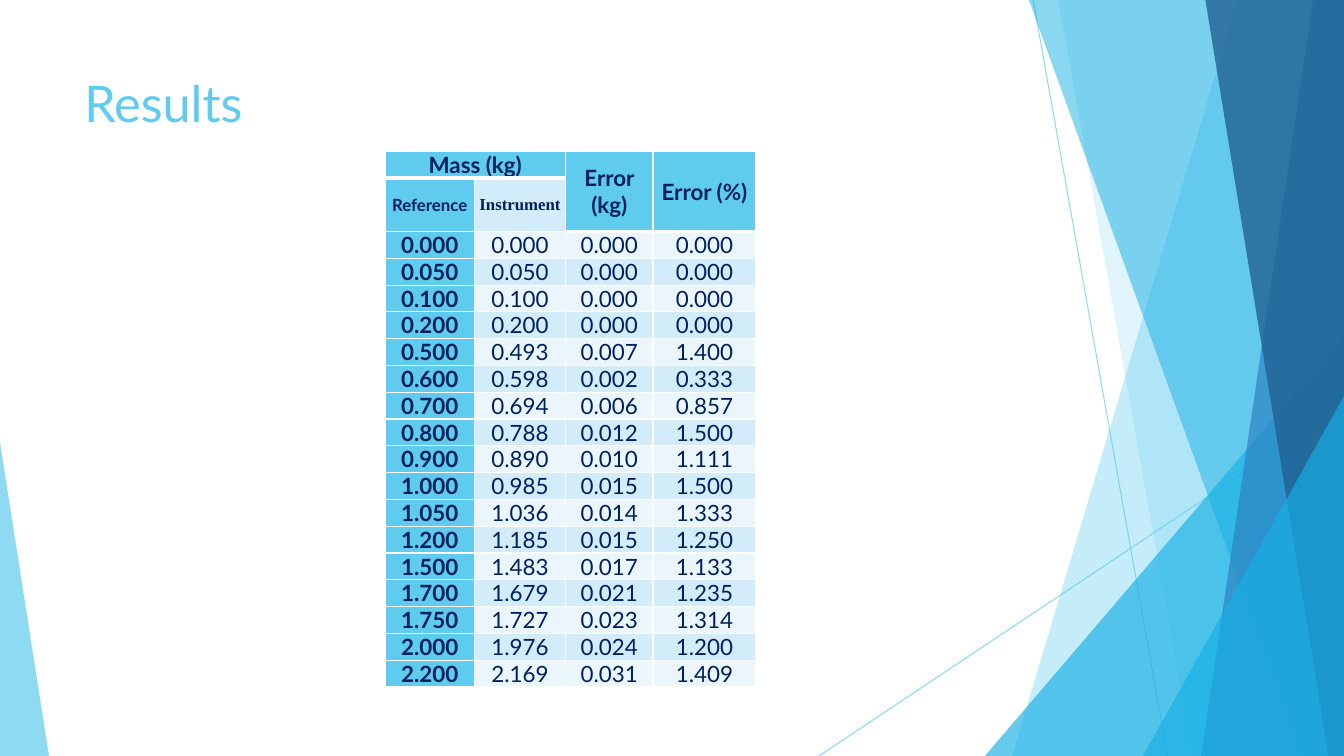
from lxml.etree import SubElement
from pptx import Presentation
from pptx.dml.color import RGBColor
from pptx.enum.shapes import MSO_CONNECTOR, MSO_SHAPE
from pptx.enum.text import MSO_ANCHOR, PP_ALIGN
from pptx.oxml.ns import qn
from pptx.util import Pt

SKY, AZURE, BLUE, NAVY = "5FCBEF", "17B0E4", "2E83C3", "226292"
INK, WHITE, PALE, PALER = "002060", "FFFFFF", "D2ECF9", "EAF6FC"

LINES = [((738, 0), (834, 540)), ((960, 290), (585, 540))]
FACETS = [
    ("band", (884, 723), SKY, 36),
    ("band", (756, 852), SKY, 20),
    ("triangle", (703.5, 240, 256.5, 300, 1), AZURE, 66),
    ("band", (735, 930), AZURE, 50),
    ("band", (938, 858), BLUE, 70),
    ("band", (861, 949), NAVY, 80),
    ("triangle", (816.5, 283, 143.5, 257, 1), AZURE, 66),
    ("triangle", (0, 316, 35, 224, 0), SKY, 70),
]
MEASUREMENTS = [
    ("0.000", "0.000", "0.000", "0.000"),
    ("0.050", "0.050", "0.000", "0.000"),
    ("0.100", "0.100", "0.000", "0.000"),
    ("0.200", "0.200", "0.000", "0.000"),
    ("0.500", "0.493", "0.007", "1.400"),
    ("0.600", "0.598", "0.002", "0.333"),
    ("0.700", "0.694", "0.006", "0.857"),
    ("0.800", "0.788", "0.012", "1.500"),
    ("0.900", "0.890", "0.010", "1.111"),
    ("1.000", "0.985", "0.015", "1.500"),
    ("1.050", "1.036", "0.014", "1.333"),
    ("1.200", "1.185", "0.015", "1.250"),
    ("1.500", "1.483", "0.017", "1.133"),
    ("1.700", "1.679", "0.021", "1.235"),
    ("1.750", "1.727", "0.023", "1.314"),
    ("2.000", "1.976", "0.024", "1.200"),
    ("2.200", "2.169", "0.031", "1.409"),
]
ROWS = [("Mass (kg)", "", "Error (kg)", "Error (%)"), ("Reference", "Instrument", "", ""), *MEASUREMENTS]
COLUMN_WIDTHS = (64, 65, 62.5, 73.5)
ROW_HEIGHT = 15.84
CELL_FORMAT = {
    "vertical_anchor": MSO_ANCHOR.MIDDLE,
    "margin_left": Pt(3),
    "margin_right": Pt(3),
    "margin_top": 0,
    "margin_bottom": 0,
}


def color(value):
    return RGBColor.from_string(value)


def apply_format(target, values):
    for name, value in values.items():
        setattr(target, name, value)


def set_opacity(shape, percent):
    for element in shape._element.spPr.iter(qn("a:srgbClr")):
        SubElement(element, qn("a:alpha"), val=str(percent * 1000))


def write_text(paragraph, text, ink, **font_format):
    run = paragraph.add_run()
    run.text = text
    run.font.color.rgb = color(ink)
    apply_format(run.font, font_format)


def add_facets(slide, left, top, width, height):
    shapes = slide.shapes.add_group_shape().shapes
    for begin, end in LINES:
        connector = shapes.add_connector(
            MSO_CONNECTOR.STRAIGHT,
            Pt(left + begin[0]), Pt(top + begin[1]), Pt(left + end[0]), Pt(top + end[1]),
        )
        connector.line.width = Pt(0.75)
        connector.line.color.rgb = color(SKY)
        set_opacity(connector, 70)
        SubElement(connector._element.spPr, qn("a:effectLst"))
    right, bottom = Pt(left + width), Pt(top + height)
    for kind, geometry, fill, opacity in FACETS:
        if kind == "band":
            upper, lower = geometry
            builder = shapes.build_freeform(Pt(left + upper), Pt(top))
            builder.add_line_segments([(right, Pt(top)), (right, bottom), (Pt(left + lower), bottom)])
            shape = builder.convert_to_shape()
        else:
            x, y, base, rise, apex = geometry
            shape = shapes.add_shape(
                MSO_SHAPE.ISOSCELES_TRIANGLE, Pt(left + x), Pt(top + y), Pt(base), Pt(rise)
            )
            shape.adjustments[0] = apex
        shape.shadow.inherit = False
        shape.fill.solid()
        shape.fill.fore_color.rgb = color(fill)
        shape.line.fill.background()
        set_opacity(shape, opacity)


def add_title(slide, left, top, width, height):
    title = slide.shapes.title
    box = {"left": left, "top": top, "width": width, "height": height}
    apply_format(title, {name: Pt(length) for name, length in box.items()})
    apply_format(title.text_frame, {"vertical_anchor": MSO_ANCHOR.TOP, "word_wrap": True})
    paragraph = title.text_frame.paragraphs[0]
    paragraph.alignment = PP_ALIGN.LEFT
    write_text(paragraph, "Results", SKY, name="Lato", size=Pt(36))


def set_borders(cell, bottom_width):
    properties = cell._tc.get_or_add_tcPr()
    widths = {"a:lnL": 1, "a:lnR": 1, "a:lnT": 1, "a:lnB": bottom_width}
    for tag, width in widths.items():
        border = SubElement(properties, qn(tag), w=str(Pt(width)))
        fill = SubElement(border, qn("a:solidFill"))
        SubElement(fill, qn("a:srgbClr"), val=WHITE)


def cell_fill(row, column):
    if row == 0 or column == 0 or (row == 1 and column > 1):
        return SKY
    return PALE if row % 2 else PALER


def add_results_table(slide, left, top, width, height):
    frame = slide.shapes.add_table(
        len(ROWS), len(COLUMN_WIDTHS), Pt(left), Pt(top), Pt(width), Pt(height)
    )
    table = frame.table
    apply_format(table, {"first_row": False, "horz_banding": False})
    for column, column_width in zip(table.columns, COLUMN_WIDTHS):
        column.width = Pt(column_width)
    for row in table.rows:
        row.height = Pt(ROW_HEIGHT)
    frame.height = Pt(height)
    table.cell(0, 0).merge(table.cell(0, 1))
    for column in (2, 3):
        table.cell(0, column).merge(table.cell(1, column))
    for row, values in enumerate(ROWS):
        for column, text in enumerate(values):
            cell = table.cell(row, column)
            apply_format(cell, CELL_FORMAT)
            set_borders(cell, 3 if row == 0 or (row == 1 and column > 1) else 1)
            cell.fill.solid()
            cell.fill.fore_color.rgb = color(cell_fill(row, column))
            if text:
                paragraph = cell.text_frame.paragraphs[0]
                paragraph.alignment = PP_ALIGN.CENTER
                write_text(
                    paragraph, text, INK,
                    name="Times New Roman" if text == "Instrument" else "Lato",
                    size=Pt(12 if row == 1 else 16),
                    bold=row < 2 or column == 0,
                )


def main():
    presentation = Presentation()
    apply_format(presentation, {"slide_width": Pt(960), "slide_height": Pt(540)})
    slide = presentation.slides.add_slide(presentation.slide_layouts[5])
    add_facets(slide, 0, 0, 960, 540)
    add_title(slide, 53, 48, 677, 104)
    add_results_table(slide, 275, 108, sum(COLUMN_WIDTHS), 365)
    presentation.save("out.pptx")


if __name__ == "__main__":
    main()
